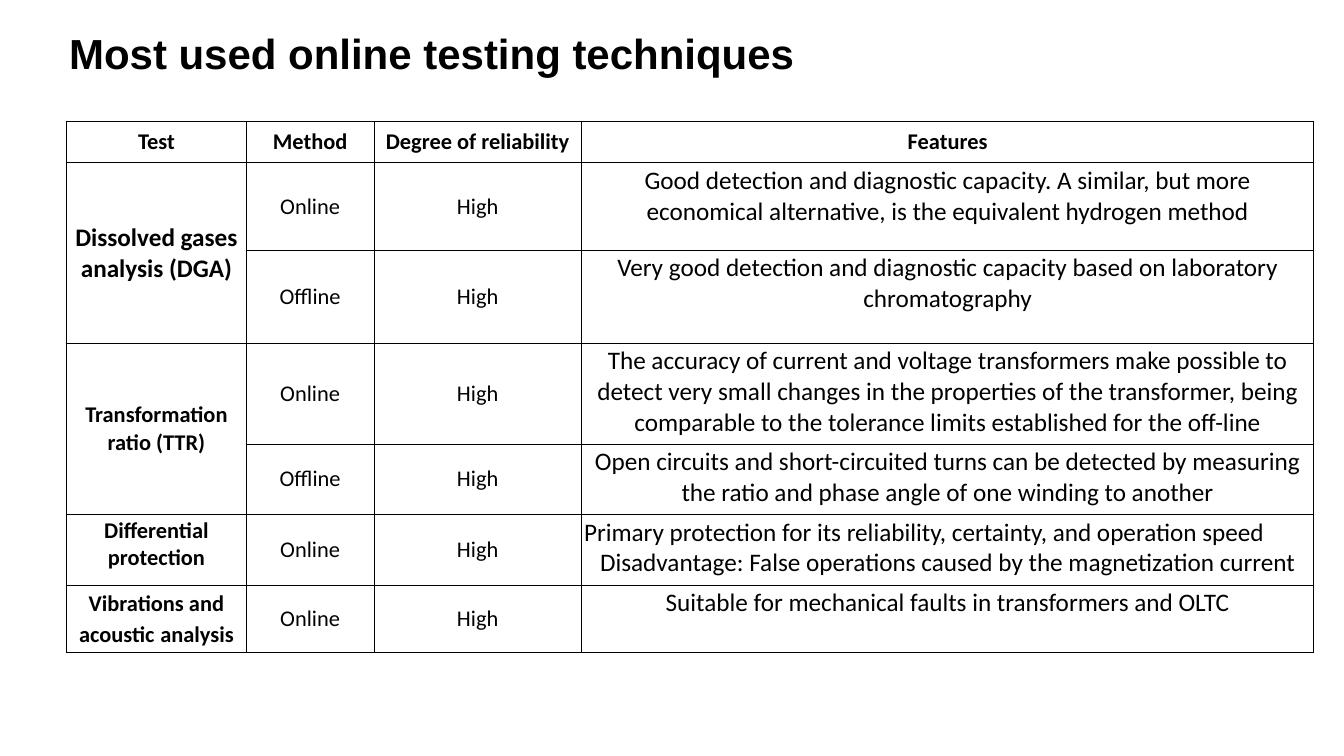
from lxml import etree
from pptx import Presentation
from pptx.dml.color import RGBColor
from pptx.enum.text import MSO_ANCHOR, PP_ALIGN
from pptx.oxml.ns import qn
from pptx.util import Inches, Pt

BLACK = RGBColor(0, 0, 0)
WHITE = RGBColor(255, 255, 255)

# Content
TITLE = "Most used online testing techniques"
HEADERS = ["Test", "Method", "Degree of reliability", "Features"]
# Each test: name, name size, anchor, and its (method, reliability, features) rows.
# A "|" separates bold words from the larger regular gaps between them.
TESTS = [
    ("Dissolved gases analysis (DGA)", 36, MSO_ANCHOR.MIDDLE, [
        ("Online", "High", "Good detection and diagnostic capacity. A similar, but more "
         "economical alternative, is the equivalent hydrogen method"),
        ("Offline", "High", "Very good detection and diagnostic capacity based on "
         "laboratory chromatography")]),
    ("Transformation ratio (TTR)", 32, MSO_ANCHOR.MIDDLE, [
        ("Online", "High", "The accuracy of current and voltage transformers make possible "
         "to detect very small changes in the properties of the transformer, being "
         "comparable to the tolerance limits established for the off-line"),
        ("Offline", "High", "Open circuits and short-circuited turns can be detected by "
         "measuring the ratio and phase angle of one winding to another")]),
    ("Differential protection", 32, MSO_ANCHOR.TOP, [
        ("Online", "High", "Primary protection for its reliability, certainty, and "
         "operation speed\nDisadvantage: False operations caused by the magnetization "
         "current")]),
    ("Vibrations and| |acoustic| |analysis", 32, MSO_ANCHOR.TOP, [
        ("Online", "High", "Suitable for mechanical faults in transformers and OLTC")]),
]

# Layout in inches
SLIDE_W, SLIDE_H = 26.67, 15
LEFT, TABLE_TOP = 1.32, 2.4
COLUMNS = [3.57, 2.53, 4.12, 14.53]
ROWS = [0.83, 1.73, 1.85, 2, 1.4, 1.4, 1.3]
BODY_SIZE, FEATURE_SIZE = 32, 36


def set_margins(target, inset):
    for side in ("left", "right", "top", "bottom"):
        setattr(target, f"margin_{side}", Inches(inset))


def add_run(paragraph, text, size, bold, font="Calibri"):
    run = paragraph.add_run()
    run.text = text
    for name, value in dict(name=font, size=Pt(size), bold=bold).items():
        setattr(run.font, name, value)
    run.font.color.rgb = BLACK


def add_borders(cell):
    properties = cell._tc.get_or_add_tcPr()
    for position, side in enumerate(("lnL", "lnR", "lnT", "lnB")):
        line = etree.Element(qn(f"a:{side}"), w=str(Pt(1)))
        fill = etree.SubElement(line, qn("a:solidFill"))
        etree.SubElement(fill, qn("a:srgbClr"), val=str(BLACK))
        properties.insert(position, line)


def fill_cell(cell, text, size=BODY_SIZE, bold=False, anchor=MSO_ANCHOR.MIDDLE, inset=0.06):
    cell.vertical_anchor = anchor
    set_margins(cell, inset)
    lines = text.split("\n")
    for number, line in enumerate(lines):
        frame = cell.text_frame
        paragraph = frame.add_paragraph() if number else frame.paragraphs[0]
        # The first of several lines starts at the left edge
        leads = number < len(lines) - 1
        paragraph.alignment = PP_ALIGN.LEFT if leads else PP_ALIGN.CENTER
        for piece, words in enumerate(line.split("|")):
            is_gap = piece % 2 == 1
            add_run(paragraph, words, FEATURE_SIZE if is_gap else size, bold and not is_gap)


presentation = Presentation()
presentation.slide_width, presentation.slide_height = Inches(SLIDE_W), Inches(SLIDE_H)
slide = presentation.slides.add_slide(presentation.slide_layouts[5])

# Title
title = slide.shapes.title
title.left, title.top, title.width, title.height = map(Inches, (LEFT, 0.5, 24.03, 1.11))
title.text_frame.vertical_anchor = MSO_ANCHOR.MIDDLE
set_margins(title.text_frame, 0.05)
heading = title.text_frame.paragraphs[0]
heading.alignment = PP_ALIGN.LEFT
add_run(heading, TITLE, 60, True, "Arial")

# Table grid
table = slide.shapes.add_table(
    len(ROWS), len(COLUMNS), Inches(LEFT), Inches(TABLE_TOP),
    Inches(sum(COLUMNS)), Inches(sum(ROWS))).table
table.first_row = table.horz_banding = False
for column, width in zip(table.columns, COLUMNS):
    column.width = Inches(width)
for row, height in zip(table.rows, ROWS):
    row.height = Inches(height)
for cell in table.iter_cells():
    cell.fill.solid()
    cell.fill.fore_color.rgb = WHITE
    add_borders(cell)

# Header row
for index, header in enumerate(HEADERS):
    fill_cell(table.cell(0, index), header, bold=True)

# Tests, each name spanning its methods
row = 1
for name, name_size, anchor, methods in TESTS:
    name_cell = table.cell(row, 0)
    if len(methods) > 1:
        name_cell.merge(table.cell(row + len(methods) - 1, 0))
    fill_cell(name_cell, name, name_size, True, anchor, 0.05)
    for method, reliability, features in methods:
        fill_cell(table.cell(row, 1), method)
        fill_cell(table.cell(row, 2), reliability)
        fill_cell(table.cell(row, 3), features, FEATURE_SIZE, False, MSO_ANCHOR.TOP, 0.05)
        row += 1

presentation.save("out.pptx")
